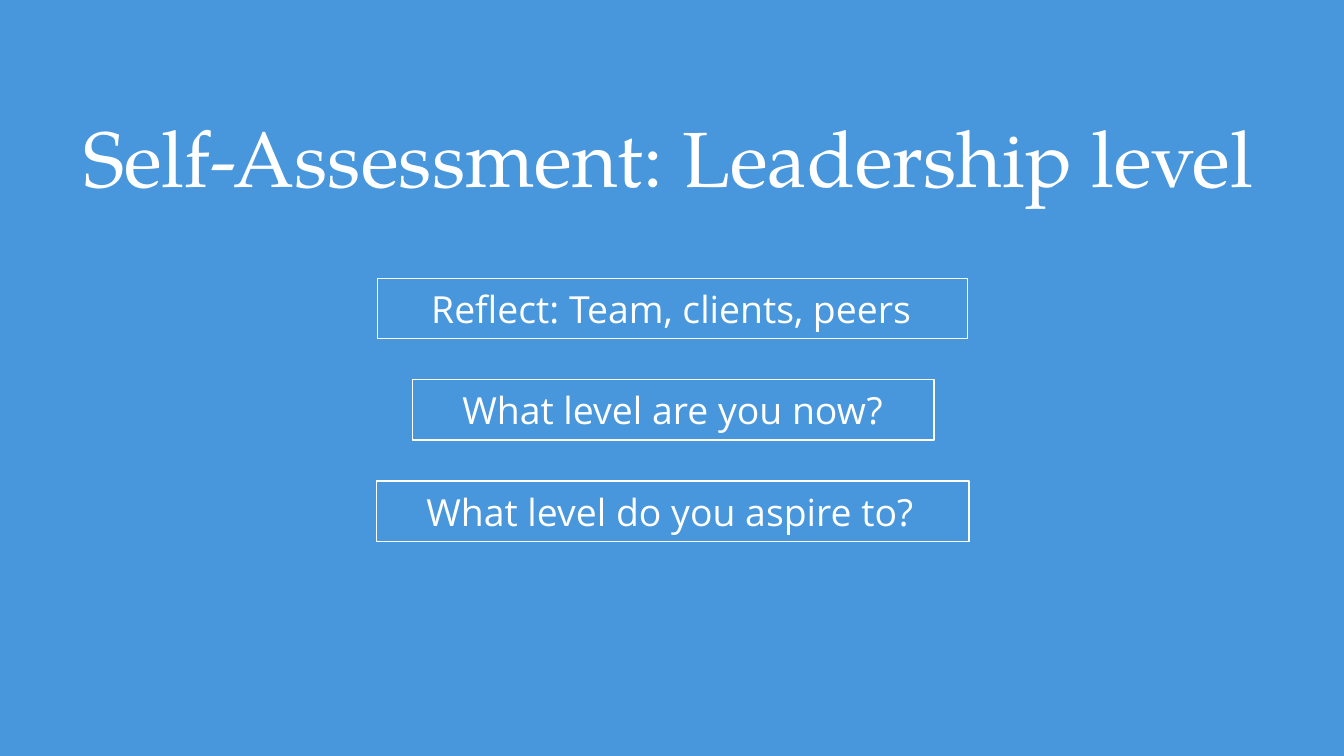
"""Build the leadership self-assessment slide."""
from dataclasses import dataclass

from pptx import Presentation
from pptx.dml.color import RGBColor
from pptx.enum.shapes import MSO_SHAPE
from pptx.enum.text import MSO_ANCHOR, MSO_AUTO_SIZE, PP_ALIGN
from pptx.util import Inches, Pt

HEADING = "Self-Assessment: Leadership level"
PROMPTS = [
    {"words": "Reflect: Team, clients, peers", "frame": (2.81, 4.39), "label": (2.86, 4.27)},
    {"words": "What level are you now?", "frame": (3.07, 3.88), "label": (3, 4.01)},
    {"words": "What level do you aspire to?", "frame": (2.8, 4.41), "label": (2.13, 5.71)},
]


@dataclass(frozen=True)
class Theme:
    blue: RGBColor = RGBColor(0x48, 0x97, 0xDD)
    white: RGBColor = RGBColor(0xFF, 0xFF, 0xFF)
    heading_font: str = "TeX Gyre Pagella"
    prompt_font: str = "Open Sans"
    heading_size: int = 42
    prompt_size: int = 20
    outline: float = 0.75


THEME = Theme()
SLIDE_WIDTH = 10
SLIDE_HEIGHT = SLIDE_WIDTH * 9 / 16
FIRST_TOP, LAST_TOP = 2.07, 3.58
PITCH = (LAST_TOP - FIRST_TOP) / (len(PROMPTS) - 1)
FRAME_HEIGHT, LABEL_HEIGHT = 0.45, 0.31


def write(shape, words, font, size, anchor):
    text = shape.text_frame
    text.word_wrap = True
    text.auto_size = MSO_AUTO_SIZE.NONE
    text.vertical_anchor = anchor
    text.margin_left = text.margin_right = Inches(0.1)
    text.margin_top = text.margin_bottom = Inches(0.1)
    paragraph = text.paragraphs[0]
    paragraph.alignment = PP_ALIGN.CENTER
    run = paragraph.add_run()
    run.text = words
    run.font.name = font
    run.font.size = Pt(size)
    run.font.color.rgb = THEME.white


def add_rectangle(slide, left, top, width, height):
    rectangle = slide.shapes.add_shape(
        MSO_SHAPE.RECTANGLE, Inches(left), Inches(top), Inches(width), Inches(height)
    )
    rectangle.shadow.inherit = False
    return rectangle


def add_backdrop(slide):
    backdrop = add_rectangle(slide, -0.04, 0, 10.07, SLIDE_HEIGHT)
    backdrop.fill.solid()
    backdrop.fill.fore_color.rgb = THEME.blue
    backdrop.line.fill.background()
    slide.shapes.title.element.addprevious(backdrop.element)


def add_heading(slide):
    heading = slide.shapes.title
    heading.left, heading.top = Inches(0.19), Inches(0.71)
    heading.width, heading.height = Inches(9.56), Inches(0.97)
    write(heading, HEADING, THEME.heading_font, THEME.heading_size, MSO_ANCHOR.TOP)


def add_prompts(slide):
    for row, prompt in enumerate(PROMPTS):
        top = FIRST_TOP + row * PITCH
        left, width = prompt["frame"]
        frame = add_rectangle(slide, left, top, width, FRAME_HEIGHT)
        frame.fill.background()
        frame.line.color.rgb = THEME.white
        frame.line.width = Pt(THEME.outline)

        left, width = prompt["label"]
        label_top = top + (FRAME_HEIGHT - LABEL_HEIGHT) / 2
        label = slide.shapes.add_textbox(
            Inches(left), Inches(label_top), Inches(width), Inches(LABEL_HEIGHT)
        )
        write(label, prompt["words"], THEME.prompt_font, THEME.prompt_size, MSO_ANCHOR.MIDDLE)


def main():
    deck = Presentation()
    deck.slide_width, deck.slide_height = Inches(SLIDE_WIDTH), Inches(SLIDE_HEIGHT)
    slide = deck.slides.add_slide(deck.slide_layouts[5])
    add_backdrop(slide)
    add_heading(slide)
    add_prompts(slide)
    deck.save("out.pptx")


if __name__ == "__main__":
    main()
